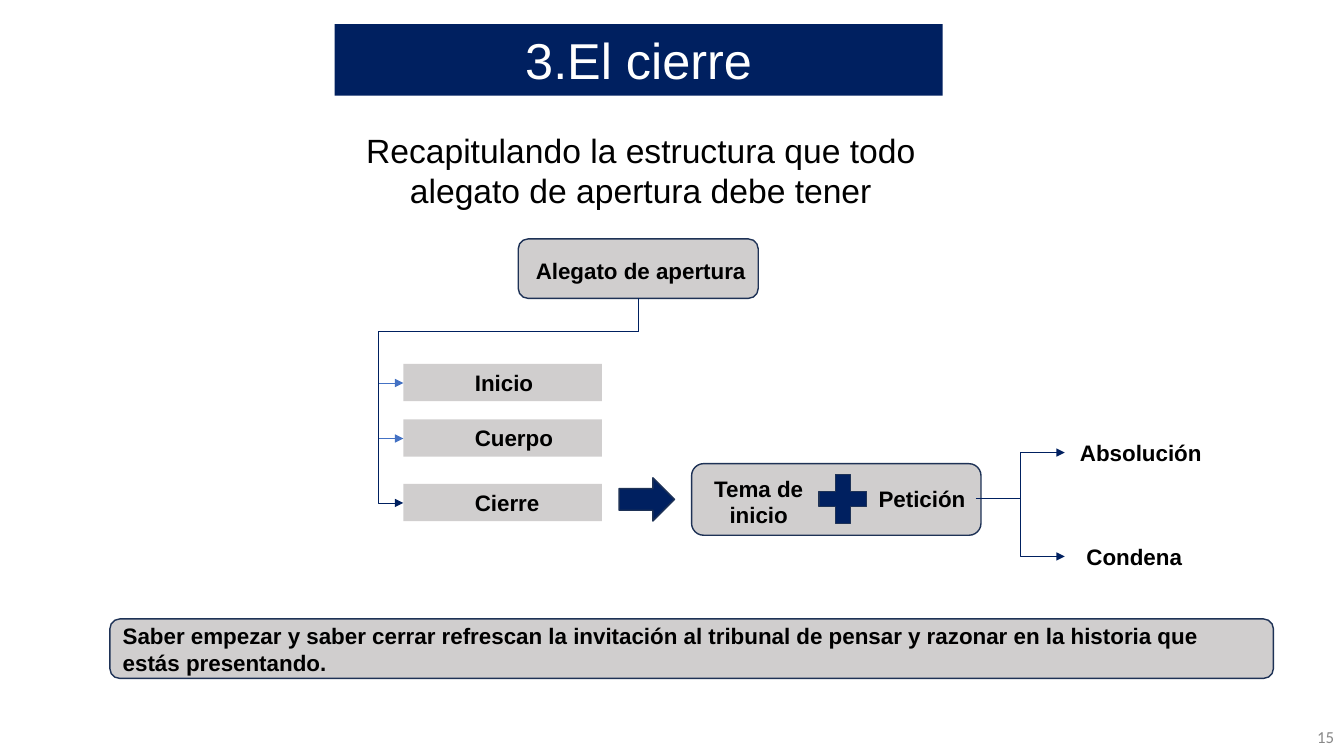
from lxml.etree import SubElement
from pptx import Presentation
from pptx.dml.color import RGBColor
from pptx.enum.shapes import MSO_CONNECTOR, MSO_SHAPE
from pptx.enum.text import MSO_ANCHOR, PP_ALIGN
from pptx.oxml.ns import qn
from pptx.util import Inches, Pt

NAVY, OUTLINE, GRAY, BLUE = "002060", "1E3256", "D0CECE", "4472C4"


def color(value):
    return RGBColor.from_string(value)


def write(shape, text, size=16, bold=True, ink="000000", font="Arial",
          align=PP_ALIGN.CENTER, anchor=MSO_ANCHOR.TOP, indent=0.1):
    frame = shape.text_frame
    frame.word_wrap = True
    frame.vertical_anchor = anchor
    frame.margin_left = Inches(indent)
    paragraph = frame.paragraphs[0]
    paragraph.alignment = align
    run = paragraph.add_run()
    run.text = text
    run.font.name = font
    run.font.size = Pt(size)
    run.font.bold = bold
    run.font.color.rgb = color(ink)


class Diagram:
    def __init__(self, slide):
        self.shapes = slide.shapes

    def block(self, kind, box, fill=GRAY, outline=OUTLINE):
        shape = self.shapes.add_shape(kind, *map(Inches, box))
        shape.shadow.inherit = False
        shape.fill.solid()
        shape.fill.fore_color.rgb = color(fill)
        if outline:
            shape.line.color.rgb = color(outline)
            shape.line.width = Pt(1)
        else:
            shape.line.fill.background()
        return shape

    def label(self, text, box, **style):
        write(self.shapes.add_textbox(*map(Inches, box)), text, **style)

    def elbow(self, x1, y1, x2, y2, ink=NAVY):
        line = self.shapes.add_connector(
            MSO_CONNECTOR.ELBOW, *map(Inches, (x1, y1, x2, y2)))
        line.line.color.rgb = color(ink)
        line.line.width = Pt(0.5)
        properties = line._element.spPr
        outline = properties.find(qn("a:ln"))
        SubElement(outline, qn("a:tailEnd"), type="triangle")
        SubElement(properties, qn("a:effectLst"))
        return line

    def branch(self, x1, y1, x2, y2, drop, bus_x, ink):
        """Arrow going down by drop, left to bus_x, down again, then right."""
        width, height = y2 - y1, x1 - x2
        left = (x1 + x2 - width) / 2
        top = (y1 + y2 - height) / 2
        line = self.elbow(left, top, left + width, top + height, ink)
        properties = line._element.spPr
        properties.find(qn("a:xfrm")).set("rot", str(90 * 60000))
        geometry = properties.find(qn("a:prstGeom"))
        geometry.set("prst", "bentConnector4")
        guides = geometry.find(qn("a:avLst"))
        if guides is None:
            guides = SubElement(geometry, qn("a:avLst"))
        ratios = (drop / width, (x1 - bus_x) / height)
        for number, ratio in enumerate(ratios, 1):
            SubElement(guides, qn("a:gd"), name=f"adj{number}",
                       fmla=f"val {round(ratio * 100000)}")


def main():
    deck = Presentation()
    deck.slide_width, deck.slide_height = Inches(13.33), Inches(7.5)
    diagram = Diagram(deck.slides.add_slide(deck.slide_layouts[6]))

    title = diagram.block(MSO_SHAPE.RECTANGLE, (3.32, 0.24, 6.03, 0.71), NAVY, None)
    write(title, "3.El cierre", size=36, bold=False, ink="FFFFFF")
    diagram.label("Recapitulando la estructura que todo alegato de apertura debe tener",
                  (3.13, 1.24, 6.45, 0.91), size=24, bold=False)

    diagram.block(MSO_SHAPE.ROUNDED_RECTANGLE, (5.14, 2.37, 2.38, 0.59))
    diagram.label("Alegato de apertura", (5.14, 2.5, 2.43, 0.37))

    parts = (("Inicio", 3.61, BLUE), ("Cuerpo", 4.16, BLUE), ("Cierre", 4.8, NAVY))
    for name, top, ink in parts:
        part = diagram.block(MSO_SHAPE.RECTANGLE, (4, top, 1.97, 0.37), outline=None)
        write(part, name, align=PP_ALIGN.LEFT, indent=0.71)
        diagram.branch(6.33, 2.96, 4, top + 0.19, drop=0.33, bus_x=3.75, ink=ink)

    diagram.block(MSO_SHAPE.RIGHT_ARROW, (6.14, 4.74, 0.55, 0.43), NAVY)
    diagram.block(MSO_SHAPE.ROUNDED_RECTANGLE, (6.86, 4.6, 2.87, 0.71))
    diagram.label("Tema de inicio", (6.7, 4.66, 1.65, 0.64))
    diagram.block(MSO_SHAPE.MATH_PLUS, (8.04, 4.62, 0.64, 0.66), NAVY)
    diagram.label("Petición", (8.61, 4.76, 1.07, 0.37))

    outcomes = (("Absolución", 4.31, 1.51), ("Condena", 5.34, 1.38))
    for outcome, top, width in outcomes:
        diagram.label(outcome, (10.56, top, width, 0.37))
        diagram.elbow(9.68, 4.94, 10.56, top + 0.18)

    advice = diagram.block(MSO_SHAPE.ROUNDED_RECTANGLE, (1.09, 6.14, 11.54, 0.59))
    write(advice, "Saber empezar y saber cerrar refrescan la invitación al tribunal de "
          "pensar y razonar en la historia que estás presentando.",
          align=PP_ALIGN.LEFT, anchor=MSO_ANCHOR.MIDDLE)
    diagram.label("15", (10.33, 7.11, 3, 0.4), size=12, bold=False, ink="888888",
                  font="Calibri", align=PP_ALIGN.RIGHT, anchor=MSO_ANCHOR.MIDDLE)

    deck.save("out.pptx")


if __name__ == "__main__":
    main()
